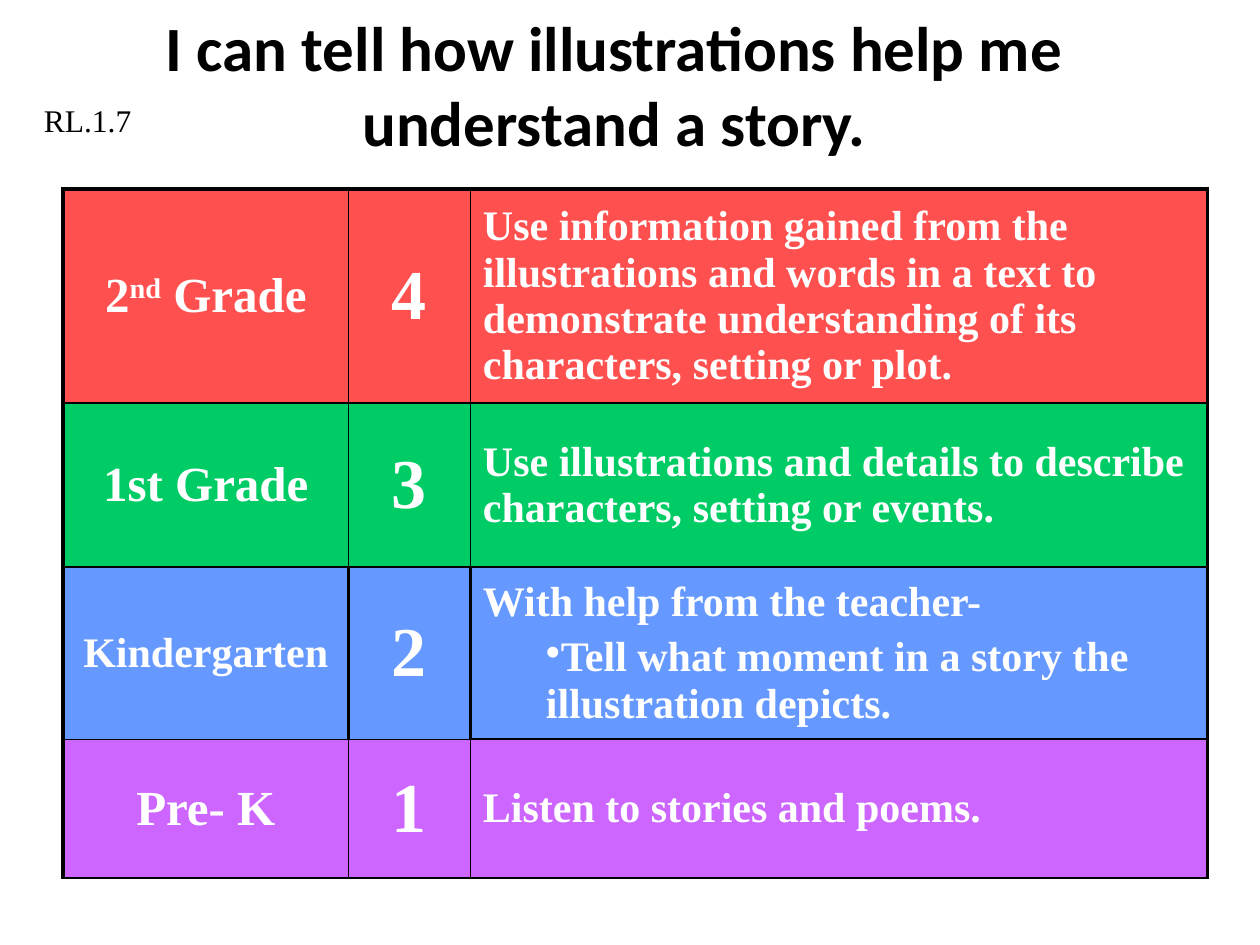
"""Builds a slide with a four-step grade scale for reading illustrations."""
from dataclasses import dataclass

from lxml import etree
from pptx import Presentation
from pptx.dml.color import RGBColor
from pptx.enum.text import MSO_ANCHOR, PP_ALIGN
from pptx.oxml.ns import qn
from pptx.util import Pt

MID = MSO_ANCHOR.MIDDLE
LEFT, CENTER = PP_ALIGN.LEFT, PP_ALIGN.CENTER


@dataclass(frozen=True)
class Theme:
    black: str = "000000"
    white: str = "FFFFFF"
    red: str = "FF5050"
    green: str = "00CC66"
    blue: str = "6699FF"
    purple: str = "CC66FF"
    head: str = "Calibri"
    body: str = "Times New Roman"
    title: int = 36
    score: int = 40
    grade: int = 28
    text: int = 24
    code: int = 18


theme = Theme()


def style(para, size, color, face, bold, align=LEFT):
    para.alignment = align
    font = para.font
    font.size, font.name, font.bold = Pt(size), face, bold
    font.color.rgb = RGBColor.from_string(color)


def edge(cell, side, width):
    line = etree.SubElement(cell._tc.get_or_add_tcPr(), qn(f"a:ln{side}"), w=str(Pt(width)))
    fill = etree.SubElement(line, qn("a:solidFill"))
    etree.SubElement(fill, qn("a:srgbClr"), val=theme.black)


deck = Presentation()
deck.slide_width, deck.slide_height = Pt(720), Pt(540)
slide = deck.slides.add_slide(deck.slide_layouts[6])

title = slide.shapes.add_textbox(Pt(12), Pt(12), Pt(678), Pt(72)).text_frame
title.word_wrap = True
title.vertical_anchor = MID
title.text = "I can tell how illustrations help me understand a story."
style(title.paragraphs[0], theme.title, theme.black, theme.head, True, CENTER)

rows = [
    (theme.red, ["2", "nd", " Grade"], theme.grade, "4",
     ["Use information gained from the illustrations and words in a text to "
      "demonstrate understanding of its characters, setting or plot."]),
    (theme.green, ["1st Grade"], theme.grade, "3",
     ["Use illustrations and details to describe characters, setting or events."]),
    (theme.blue, ["Kindergarten"], theme.text, "2",
     ["With help from the teacher-",
      "Tell what moment in a story the illustration depicts."]),
    (theme.purple, ["Pre- K"], theme.grade, "1", ["Listen to stories and poems."]),
]
widths = [163.2, 69.6, 421.2]
heights = [79.2, 93.6, 79.2, 79.2]
across = [2.25, 1.5, 1, 1, 1.5]
across_text = [2.25, 1.5, 1.5, 1.5, 1.5]
down = [2.25, 1, 1, 2.25]
down_blue = [2.25, 1.5, 1.5, 1.5]

frame = slide.shapes.add_table(4, 3, Pt(36), Pt(108), Pt(654), Pt(395.3))
table = frame.table
table.first_row = table.horz_banding = False
for col, width in zip(table.columns, widths):
    col.width = Pt(width)
for row, height in zip(table.rows, heights):
    row.height = Pt(height)
frame.height = Pt(395.3)

for r, (color, grade, size, score, lines) in enumerate(rows):
    cols = [([grade], size, CENTER), ([[score]], theme.score, CENTER),
            ([[line] for line in lines], theme.text, LEFT)]
    for c, (paras, points, align) in enumerate(cols):
        cell = table.cell(r, c)
        flat = across_text if c == 2 else across
        tall = down_blue if color == theme.blue else down
        for side, width in zip("LRTB", (tall[c], tall[c + 1], flat[r], flat[r + 1])):
            edge(cell, side, width)
        cell.fill.solid()
        cell.fill.fore_color.rgb = RGBColor.from_string(color)
        cell.vertical_anchor = MID
        body = cell.text_frame
        for i, parts in enumerate(paras):
            para = body.add_paragraph() if i else body.paragraphs[0]
            style(para, points, theme.white, theme.body, True, align)
            para.space_before = Pt(points * 0.2)
            for part in parts:
                run = para.add_run()
                run.text = part
                if part == "nd":
                    run.font._element.set("baseline", "30000")
            if i:
                para.level = 1
                props = para._p.get_or_add_pPr()
                props.set("marL", str(Pt(36)))
                props.set("indent", "0")
                bullet = etree.Element(qn("a:buChar"), char="•")
                props.find(qn("a:defRPr")).addprevious(bullet)

code = slide.shapes.add_textbox(Pt(18), Pt(54), Pt(102), Pt(29)).text_frame
code.word_wrap = True
code.text = "RL.1.7"
style(code.paragraphs[0], theme.code, theme.black, theme.body, False)

deck.save("out.pptx")
